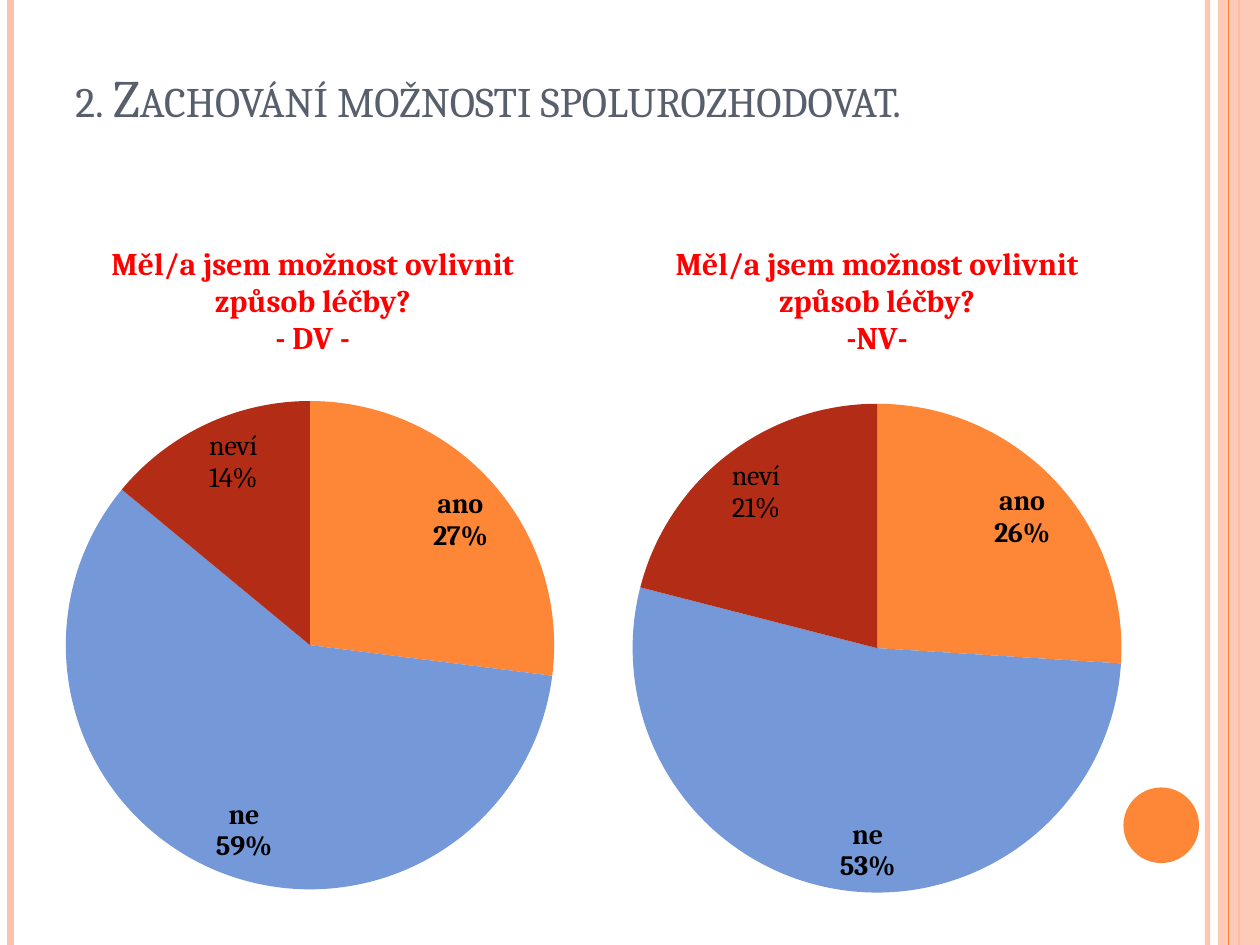
from lxml import etree
from pptx import Presentation
from pptx import util as u
from pptx.chart import data
from pptx.dml.color import RGBColor
from pptx.enum import chart as charts, shapes, text
from pptx.oxml import ns

COLORS = {"orange": "FE8637", "peach": "FEC3AE", "blue": "7598D9", "brick": "B32C16",
          "slate": "575F6D", "red": "FF0000", "black": "000000"}
FONT = "Cambria"
CATEGORIES = ("ano", "ne", "nevím")
SLICES = ("orange", "blue", "brick")
QUESTION = "Měl/a jsem možnost ovlivnit způsob léčby?"


def color(name):
    """Return the named colour."""
    return RGBColor.from_string(COLORS[name])


def style_font(font, size, name, bold=False):
    """Set typeface, size, colour and weight."""
    font.name, font.size, font.bold = FONT, u.Pt(size), bold
    font.color.rgb = color(name)


def set_alpha(element, percent):
    """Make the solid fill inside an element partly transparent."""
    target = element.find(".//" + ns.qn("a:srgbClr"))
    etree.SubElement(target, ns.qn("a:alpha"), val=str(percent * 1000))


def add_rule(slide, x, name, width, alpha=100):
    """Add a vertical line over the full slide height."""
    line = slide.shapes.add_connector(
        shapes.MSO_CONNECTOR.STRAIGHT, u.Pt(x), 0, u.Pt(x), u.Pt(540))
    line.line.color.rgb = color(name)
    line.line.width = u.Pt(width)
    properties = line._element.spPr
    if alpha < 100:
        set_alpha(properties, alpha)
    etree.SubElement(properties, ns.qn("a:effectLst"))


def add_filled(slide, kind, box, name, alpha=100):
    """Add a filled shape without outline."""
    shape = slide.shapes.add_shape(kind, *map(u.Pt, box))
    shape.shadow.inherit = False
    shape.fill.solid()
    shape.fill.fore_color.rgb = color(name)
    shape.line.fill.background()
    if alpha < 100:
        set_alpha(shape._element.spPr, alpha)


def add_heading(slide, words, box):
    """Add the small-caps slide heading."""
    frame = slide.shapes.add_textbox(*map(u.Pt, box)).text_frame
    frame.word_wrap = True
    frame.vertical_anchor = text.MSO_ANCHOR.BOTTOM
    paragraph = frame.paragraphs[0]
    paragraph.text = words
    style_font(paragraph.font, 30, "slate")
    paragraph.font._element.set("cap", "small")


def place_plot(chart, plot_box):
    """Fix the inner plot area as fractions of the chart."""
    area = chart.plots[0]._element.getparent()
    for old in area.findall(ns.qn("c:layout")):
        area.remove(old)
    layout = etree.Element(ns.qn("c:layout"))
    manual = etree.SubElement(layout, ns.qn("c:manualLayout"))
    settings = [("layoutTarget", "inner"), ("xMode", "edge"), ("yMode", "edge")]
    settings += zip("xywh", plot_box)
    for tag, value in settings:
        etree.SubElement(manual, ns.qn("c:" + tag), val=str(value))
    area.insert(0, layout)


def add_pie(slide, box, group, values, plot_box):
    """Add a labelled pie chart for one group of respondents."""
    pie_data = data.CategoryChartData()
    pie_data.categories = CATEGORIES
    pie_data.add_series("Series 1", values)
    chart = slide.shapes.add_chart(
        charts.XL_CHART_TYPE.PIE, *map(u.Pt, box), pie_data).chart
    style_font(chart.font, 10, "black")
    chart.has_legend = False
    chart.has_title = True
    chart.chart_title.include_in_layout = False
    title = chart.chart_title.text_frame
    title.text = f"{QUESTION}\n{group}"
    for paragraph in title.paragraphs:
        style_font(paragraph.font, 18, "red", True)

    plot = chart.plots[0]
    plot.vary_by_categories = True
    plot.has_data_labels = True
    labels = plot.data_labels
    labels.show_category_name = labels.show_percentage = True
    labels.show_value = False
    labels.number_format, labels.number_format_is_linked = "0%", False
    labels.position = charts.XL_LABEL_POSITION.INSIDE_END
    style_font(labels.font, 16, "black", True)
    etree.SubElement(labels._element, ns.qn("c:separator")).text = "\n"
    flags = labels._element.find(ns.qn("c:showBubbleSize"))
    if flags is not None:
        flags.addnext(labels._element[-1])

    points = plot.series[0].points
    for index, name in enumerate(SLICES):
        fill = points[index].format.fill
        fill.solid()
        fill.fore_color.rgb = color(name)
    series_element = plot.series[0]._element
    undecided = points[2].data_label
    undecided.text_frame.text = f"neví\n{values[2]}%"
    for paragraph in undecided.text_frame.paragraphs:
        style_font(paragraph.font, 16, "black")
        for run in paragraph.runs:
            style_font(run.font, 16, "black")
    undecided.position = charts.XL_LABEL_POSITION.INSIDE_END
    series_labels = series_element.find(ns.qn("c:dLbls"))
    for child in list(series_labels):
        if child.tag != ns.qn("c:dLbl"):
            series_labels.remove(child)
    series_labels.extend(list(labels._element))
    place_plot(chart, plot_box)


def main():
    """Build the slide and save it."""
    presentation = Presentation()
    presentation.slide_width, presentation.slide_height = u.Pt(720), u.Pt(540)
    slide = presentation.slides.add_slide(presentation.slide_layouts[6])
    add_rule(slide, 690, "peach", 3, 93)
    add_rule(slide, 6, "peach", 4.5)
    add_rule(slide, 708, "orange", 1.5)
    add_filled(slide, shapes.MSO_SHAPE.RECTANGLE, (696, 0, 24, 540), "peach", 87)
    add_rule(slide, 702, "orange", 0.75)
    add_filled(slide, shapes.MSO_SHAPE.OVAL, (642, 450, 43.2, 43.2), "orange")
    add_heading(slide, "2. Zachování možnosti spolurozhodovat.", (36, 21.6, 636, 55.4))
    add_pie(slide, (336.2, 126, 330, 388), "-NV-", (26, 53, 21), (0.05, 0.27, 0.9, 0.72))
    add_pie(slide, (20, 126, 317.5, 382.3), "- DV -", (27, 59, 14), (0.03, 0.27, 0.93, 0.73))
    presentation.save("out.pptx")


if __name__ == "__main__":
    main()
